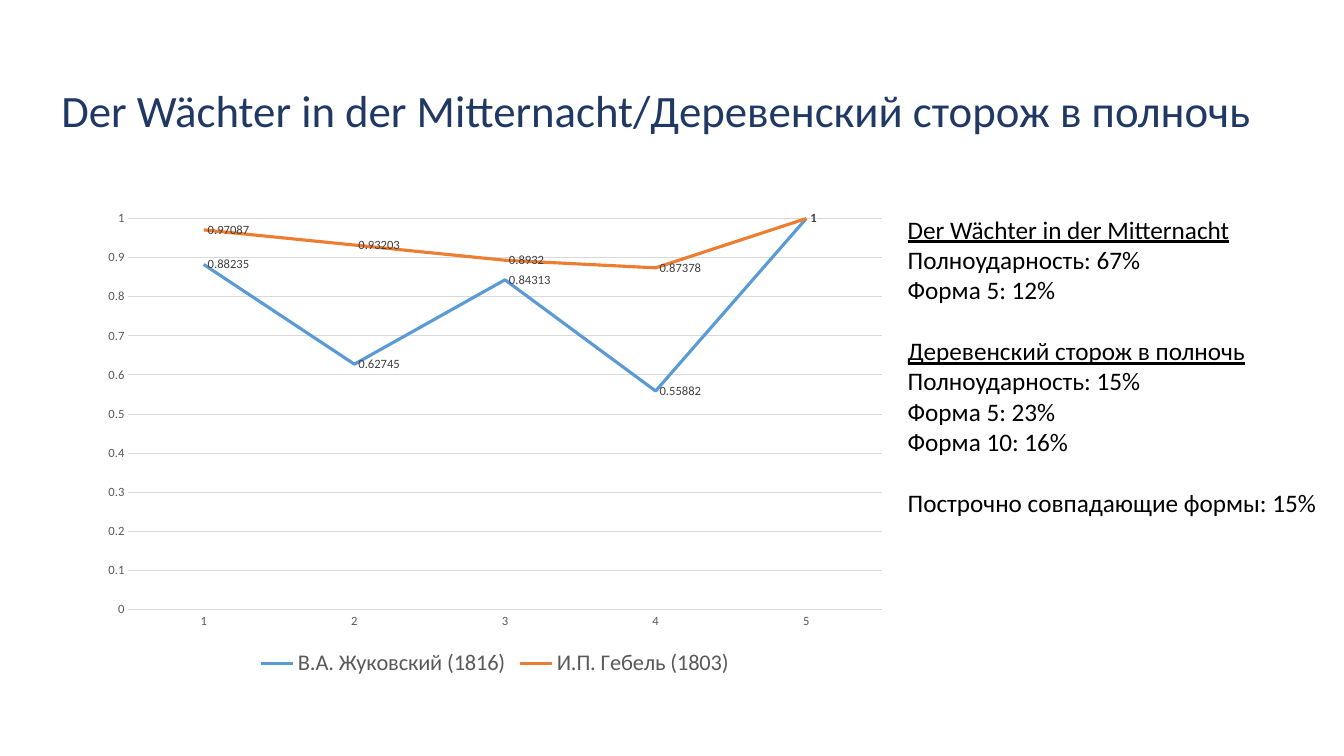
"""Build a slide comparing the rhythm of a ballad and its translation."""
from dataclasses import dataclass

from pptx import Presentation
from pptx.chart.data import CategoryChartData
from pptx.dml.color import RGBColor
from pptx.enum.chart import (XL_CHART_TYPE, XL_LABEL_POSITION, XL_LEGEND_POSITION,
                             XL_MARKER_STYLE, XL_TICK_MARK)
from pptx.enum.text import MSO_ANCHOR
from pptx.slide import Slide
from pptx.text.text import Font, TextFrame
from pptx.util import Emu, Pt


@dataclass(frozen=True)
class Theme:
    font: str = "Calibri"
    title: str = "203864"
    text: str = "000000"
    axis: str = "595959"
    label: str = "404040"
    grid: str = "D9D9D9"
    zhukovsky: str = "5B9BD5"
    hebel: str = "ED7D31"
    title_pt: int = 32
    note_pt: int = 18
    legend_pt: int = 16
    chart_pt: int = 10
    axis_pt: int = 9
    gap_pt: int = 22
    grid_pt: float = 0.75
    series_pt: float = 2.25


@dataclass(frozen=True)
class Box:
    left: int
    top: int
    width: int
    height: int

    def emu(self) -> tuple[Emu, Emu, Emu, Emu]:
        return px(self.left), px(self.top), px(self.width), px(self.height)


@dataclass(frozen=True)
class Poem:
    name: str
    color: str
    values: tuple[float, ...]


@dataclass(frozen=True)
class Note:
    text: str
    heading: bool = False
    gap: bool = False


THEME = Theme()
EMU_PER_PX = 9525
SLIDE_W, SLIDE_H = 1280, 720
TITLE_BOX = Box(49, 38, 1193, 139)
CHART_BOX = Box(88, 192, 767, 457)
NOTES_BOX = Box(855, 199, 417, 329)
TITLE = "Der Wächter in der Mitternacht/Деревенский сторож в полночь"
FEET = ("1", "2", "3", "4", "5")
POEMS = (
    Poem("В.А. Жуковский (1816)", THEME.zhukovsky, (0.88235, 0.62745, 0.84313, 0.55882, 1)),
    Poem("И.П. Гебель (1803)", THEME.hebel, (0.97087, 0.93203, 0.8932, 0.87378, 1)),
)
NOTES = (
    Note("Der Wächter in der Mitternacht", heading=True),
    Note("Полноударность: 67%"),
    Note("Форма 5: 12%"),
    Note("Деревенский сторож в полночь", heading=True, gap=True),
    Note("Полноударность: 15%"),
    Note("Форма 5: 23%"),
    Note("Форма 10: 16%"),
    Note("Построчно совпадающие формы: 15%", gap=True),
)


def px(n: int) -> Emu:
    return Emu(n * EMU_PER_PX)


def style_font(font: Font, size: int, color: str) -> None:
    font.name = THEME.font
    font.size = Pt(size)
    font.color.rgb = RGBColor.from_string(color)


def add_text_frame(s: Slide, box: Box) -> TextFrame:
    tf = s.shapes.add_textbox(*box.emu()).text_frame
    tf.word_wrap = True
    return tf


def add_title(s: Slide) -> None:
    tf = add_text_frame(s, TITLE_BOX)
    tf.vertical_anchor = MSO_ANCHOR.MIDDLE
    p = tf.paragraphs[0]
    p.text = TITLE
    p.line_spacing = 0.9
    style_font(p.font, THEME.title_pt, THEME.title)


def add_notes(s: Slide) -> None:
    tf = add_text_frame(s, NOTES_BOX)
    for i, note in enumerate(NOTES):
        p = tf.add_paragraph() if i else tf.paragraphs[0]
        p.text = note.text
        p.space_before = Pt(THEME.gap_pt if note.gap else 0)
        p.font.underline = note.heading
        style_font(p.font, THEME.note_pt, THEME.text)


def add_rhythm_chart(s: Slide) -> None:
    data = CategoryChartData()
    data.categories = FEET
    for poem in POEMS:
        data.add_series(poem.name, poem.values)
    chart = s.shapes.add_chart(XL_CHART_TYPE.LINE, *CHART_BOX.emu(), data).chart
    chart.has_title = False
    style_font(chart.font, THEME.chart_pt, THEME.text)

    chart.has_legend = True
    chart.legend.position = XL_LEGEND_POSITION.BOTTOM
    chart.legend.include_in_layout = False
    style_font(chart.legend.font, THEME.legend_pt, THEME.axis)

    feet, share = chart.category_axis, chart.value_axis
    for axis in (feet, share):
        axis.major_tick_mark = axis.minor_tick_mark = XL_TICK_MARK.NONE
        style_font(axis.tick_labels.font, THEME.axis_pt, THEME.axis)
    share.minimum_scale, share.maximum_scale, share.major_unit = 0, 1, 0.1
    share.format.line.fill.background()
    for line in (feet.format.line, share.major_gridlines.format.line):
        line.color.rgb = RGBColor.from_string(THEME.grid)
        line.width = Pt(THEME.grid_pt)

    plot = chart.plots[0]
    plot.vary_by_categories = False
    for poem, series in zip(POEMS, plot.series):
        series.smooth = False
        series.marker.style = XL_MARKER_STYLE.NONE
        series.format.line.color.rgb = RGBColor.from_string(poem.color)
        series.format.line.width = Pt(THEME.series_pt)
        labels = series.data_labels
        labels.show_value = True
        labels.position = XL_LABEL_POSITION.RIGHT
        style_font(labels.font, THEME.axis_pt, THEME.label)


def main() -> None:
    prs = Presentation()
    prs.slide_width, prs.slide_height = px(SLIDE_W), px(SLIDE_H)
    s = prs.slides.add_slide(prs.slide_layouts[6])
    add_title(s)
    add_rhythm_chart(s)
    add_notes(s)
    prs.save("out.pptx")


if __name__ == "__main__":
    main()
